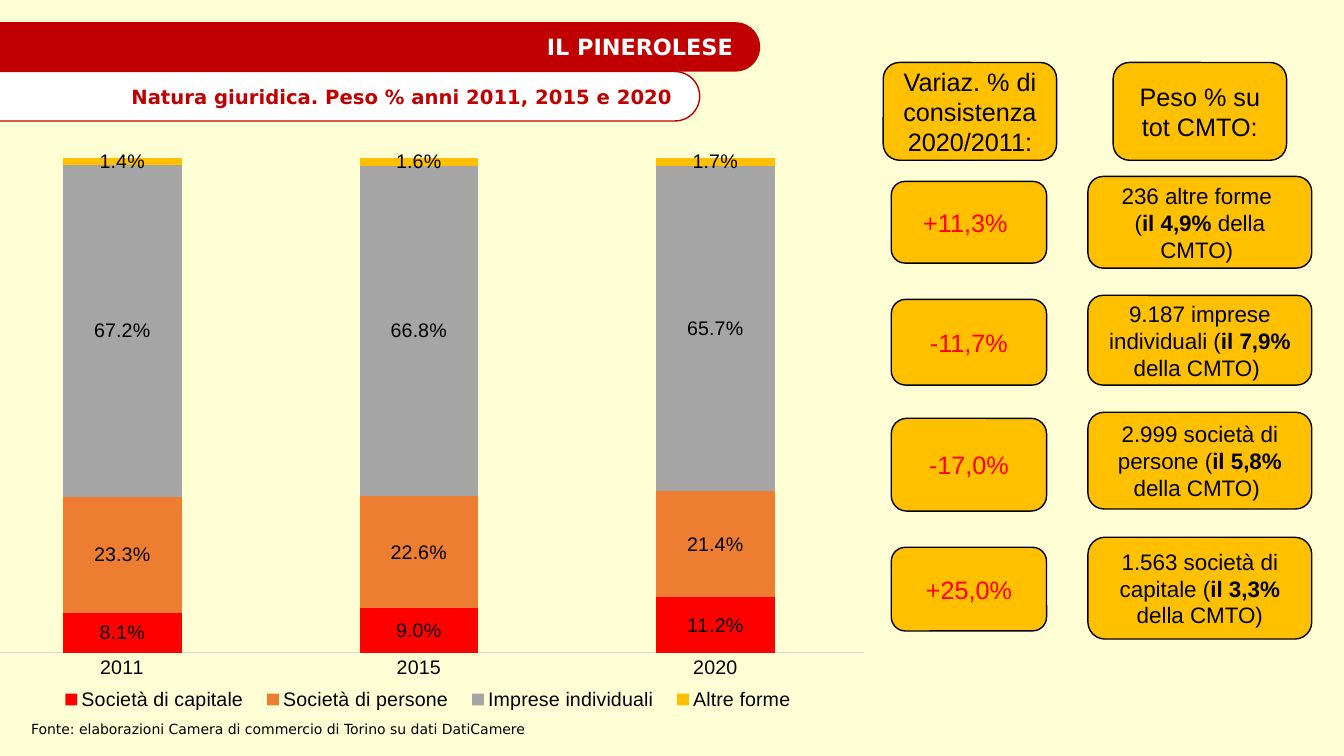
from lxml import etree
from pptx import Presentation
from pptx.chart.data import CategoryChartData
from pptx.dml.color import RGBColor
from pptx.enum.chart import XL_CHART_TYPE, XL_LABEL_POSITION, XL_LEGEND_POSITION, XL_TICK_LABEL_POSITION, XL_TICK_MARK
from pptx.enum.shapes import MSO_SHAPE
from pptx.enum.text import MSO_ANCHOR, MSO_AUTO_SIZE, PP_ALIGN
from pptx.oxml.ns import qn
from pptx.util import Inches, Pt

ROUNDED = MSO_SHAPE.ROUNDED_RECTANGLE
CENTER, RIGHT = PP_ALIGN.CENTER, PP_ALIGN.RIGHT
MIDDLE = MSO_ANCHOR.MIDDLE
NO_TICK = XL_TICK_MARK.NONE
BODY, HEADING = "Arial", "DejaVu Sans"
COLORS = {
    "background": "FFFFD5", "band": "C00000", "white": "FFFFFF", "black": "000000",
    "red": "FF0000", "orange": "ED7D31", "grey": "A5A5A5", "amber": "FFC000", "axis": "D9D9D9",
}


def style_font(font, name, size, color, bold=False):
    font.name, font.size, font.bold = name, Pt(size), bold
    font.color.rgb = RGBColor.from_string(COLORS[color])


def add_rounded(box, fill, line=None):
    shape = slide.shapes.add_shape(ROUNDED, *map(Inches, box))
    shape.shadow.inherit = False
    shape.fill.solid()
    shape.fill.fore_color.rgb = RGBColor.from_string(COLORS[fill])
    if line:
        shape.line.color.rgb = RGBColor.from_string(COLORS[line])
        shape.line.width = Pt(1)
    else:
        shape.line.fill.background()
    return shape


presentation = Presentation()
presentation.slide_width, presentation.slide_height = Inches(13.33), Inches(7.5)
slide = presentation.slides.add_slide(presentation.slide_layouts[5])
slide.background.fill.solid()
slide.background.fill.fore_color.rgb = RGBColor.from_string(COLORS["background"])

SERIES = [
    ("Società di capitale", "red", (0.081, 0.09, 0.112)),
    ("Società di persone", "orange", (0.233, 0.226, 0.214)),
    ("Imprese individuali", "grey", (0.672, 0.668, 0.657)),
    ("Altre forme", "amber", (0.014, 0.016, 0.017)),
]
chart_data = CategoryChartData(number_format="0.0%")
chart_data.categories = ["2011", "2015", "2020"]
for name, color, values in SERIES:
    chart_data.add_series(name, values)
chart = slide.shapes.add_chart(
    XL_CHART_TYPE.COLUMN_STACKED_100, *map(Inches, (-0.44, 1.45, 9.19, 5.78)), chart_data
).chart
style_font(chart.font, BODY, 10, "black")
chart.has_title = False
chart.has_legend = True
chart.legend.position = XL_LEGEND_POSITION.BOTTOM
chart.legend.include_in_layout = False
style_font(chart.legend.font, BODY, 14, "black")

category_axis, value_axis = chart.category_axis, chart.value_axis
category_axis.major_tick_mark = category_axis.minor_tick_mark = NO_TICK
category_axis.tick_label_position = XL_TICK_LABEL_POSITION.NEXT_TO_AXIS
category_axis.tick_labels.offset = 0
category_axis.format.line.color.rgb = RGBColor.from_string(COLORS["axis"])
category_axis.format.line.width = Pt(0.75)
style_font(category_axis.tick_labels.font, BODY, 14, "black")
value_axis.has_major_gridlines = False
value_axis.minimum_scale, value_axis.maximum_scale = 0, 1
value_axis.visible = False

plot = chart.plots[0]
plot.gap_width, plot.overlap, plot.vary_by_categories = 150, 100, False
for series, (name, color, values) in zip(plot.series, SERIES):
    series.format.fill.solid()
    series.format.fill.fore_color.rgb = RGBColor.from_string(COLORS[color])
    labels = series.data_labels
    labels.show_value = True
    labels.number_format, labels.number_format_is_linked = "0.0%", False
    labels.position = XL_LABEL_POSITION.CENTER
    style_font(labels.font, BODY, 14, "black")

for part, index, inner, shares in (
    ("c:plotArea", 0, [("layoutTarget", "inner")], ("0.02", "0.02", "0.96", "0.85")),
    ("c:legend", 1, [], ("0.1", "0.92", "0.82", "0.06")),
):
    element = chart.element.find(".//" + qn(part))
    for old_layout in element.findall(qn("c:layout")):
        element.remove(old_layout)
    layout = etree.Element(qn("c:layout"))
    element.insert(index, layout)
    manual = etree.SubElement(layout, qn("c:manualLayout"))
    for tag, value in inner + [("xMode", "edge"), ("yMode", "edge")] + list(zip("xywh", shares)):
        etree.SubElement(manual, qn("c:" + tag)).set("val", value)

title_box = (-0.64, 0.22, 8.18, 0.49)
title_band = add_rounded(title_box, "band")
subtitle = add_rounded((-0.3, 0.71, 7.24, 0.49), "white", "band")
title = slide.shapes.title
title.left, title.top, title.width, title.height = map(Inches, title_box)
title.element.getparent().append(title.element)
title_band.adjustments[0] = subtitle.adjustments[0] = 0.5
for shape, text, size, color, margin in (
    (title, "IL PINEROLESE", 16, "white", 0.27),
    (subtitle, "Natura giuridica. Peso % anni 2011, 2015 e 2020", 14, "band", 0.2),
):
    frame = shape.text_frame
    frame.text = text
    frame.word_wrap, frame.auto_size = True, MSO_AUTO_SIZE.NONE
    frame.vertical_anchor = MIDDLE
    frame.margin_left = frame.margin_top = frame.margin_bottom = 0
    frame.margin_right = Inches(margin)
    frame.paragraphs[0].alignment = RIGHT
    style_font(frame.paragraphs[0].runs[0].font, HEADING, size, color, True)

HEADER_TOP, HEADER_WIDTH, HEADER_HEIGHT = 0.62, 1.72, 0.97
CHANGE_LEFT, CHANGE_WIDTH = 8.84, 1.54
SHARE_LEFT, SHARE_WIDTH = 10.79, 2.22
cards = [
    ((8.76, HEADER_TOP, HEADER_WIDTH, HEADER_HEIGHT), "Variaz. % di consistenza 2020/2011:", 18, "black"),
    ((11.04, HEADER_TOP, HEADER_WIDTH, HEADER_HEIGHT), "Peso % su tot CMTO:", 18, "black"),
]
for change_top, change_height, change, share_top, share_height, share in (
    (1.8, 0.81, "+11,3% ", 1.75, 0.91, "236 altre forme \n(*il 4,9% *della CMTO) "),
    (2.97, 0.85, "-11,7%", 2.93, 0.89, "9.187 imprese individuali (*il 7,9% *della CMTO) "),
    (4.15, 0.92, "-17,0%", 4.09, 0.96, "2.999 società di persone (*il 5,8% *della CMTO) "),
    (5.43, 0.83, "+25,0%", 5.33, 1.01, "1.563 società di capitale (*il 3,3% *della CMTO)"),
):
    cards.append(((CHANGE_LEFT, change_top, CHANGE_WIDTH, change_height), change, 18, "red"))
    cards.append(((SHARE_LEFT, share_top, SHARE_WIDTH, share_height), share, 16, "black"))

for box, text, size, color in cards:
    frame = add_rounded(box, "amber", "black").text_frame
    frame.word_wrap, frame.vertical_anchor = True, MIDDLE
    frame.text = text.replace("*", "")
    for paragraph, line in zip(frame.paragraphs, text.split("\n")):
        paragraph.alignment = CENTER
        paragraph.clear()
        for index, part in enumerate(line.split("*")):
            run = paragraph.add_run()
            run.text = part
            style_font(run.font, BODY, size, color, index % 2 == 1)

source = slide.shapes.add_textbox(*map(Inches, (0.21, 7.1, 5.23, 0.27))).text_frame
source.text = "Fonte: elaborazioni Camera di commercio di Torino su dati DatiCamere"
source.word_wrap = False
style_font(source.paragraphs[0].runs[0].font, HEADING, 10, "black")

presentation.save("out.pptx")
